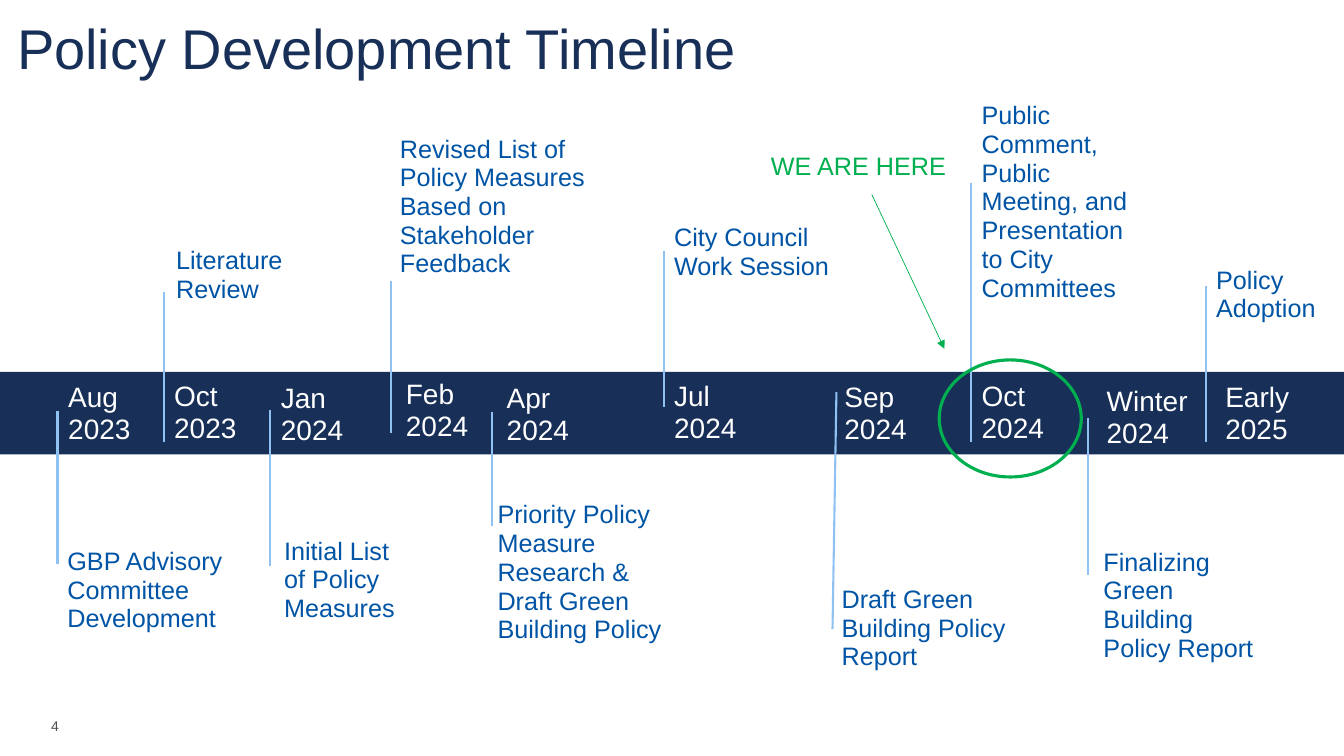
import pptx
import pptx.util
import pptx.dml.color
import pptx.enum.shapes
import pptx.enum.text
import pptx.oxml
import pptx.oxml.ns
from dataclasses import dataclass
from typing import NamedTuple

Cm = pptx.util.Cm
Pt = pptx.util.Pt
Anchor = pptx.enum.text.MSO_ANCHOR
Shape = pptx.enum.shapes.MSO_SHAPE


@dataclass(frozen=True)
class Theme:
    font: str = "Arial"
    navy: str = "182F58"
    label: str = "0054A5"
    stem: str = "8FC2F2"
    marker: str = "00B050"
    white: str = "FFFFFF"
    grey: str = "4D4D4F"
    title_size: int = 40
    date_size: int = 20
    label_size: int = 18
    number_size: int = 10
    line_spacing: float = 0.95


class Event(NamedTuple):
    date: str
    date_box: tuple
    stem: tuple
    label: str
    label_box: tuple
    label_lines: int


DATE_HEIGHT = 1.88
LINE_HEIGHT = 0.73
BOX_PADDING = 0.25

EVENTS = [
    Event("Aug 2023", (1.47, 9.5, 3.02), (1.45, 10.36, 1.45, 14.22),
          "GBP Advisory Committee Development", (1.45, 13.67, 4.95), 3),
    Event("Oct 2023", (4.14, 9.47, 2.87), (4.14, 7.37, 4.14, 11.13),
          "Literature Review", (4.19, 6.1, 5.18), 2),
    Event("Jan 2024", (6.83, 9.53, 2.64), (6.81, 10.34, 6.81, 14.27),
          "Initial List of Policy Measures", (6.91, 13.41, 3.84), 3),
    Event("Feb 2024", (9.98, 9.42, 2.62), (9.86, 7.09, 9.86, 10.9),
          "Revised List of Policy Measures Based on Stakeholder Feedback",
          (9.83, 3.28, 5.18), 5),
    Event("Apr 2024", (12.52, 9.53, 2.79), (12.4, 10.39, 12.4, 13.26),
          "Priority Policy Measure Research & Draft Green Building Policy",
          (12.29, 12.5, 5.18), 5),
    Event("Jul 2024", (16.74, 9.47, 2.51), (16.74, 6.32, 16.74, 10.26),
          "City Council Work Session", (16.74, 5.51, 4.47), 2),
    Event("Sep 2024", (21.03, 9.5, 2.51), (21.08, 9.88, 20.98, 15.85),
          "Draft Green Building Policy Report", (20.96, 14.63, 5.18), 3),
    Event("Oct 2024", (24.49, 9.47, 2.74), (24.46, 4.62, 24.46, 11.13),
          "Public Comment, Public Meeting, and Presentation to City Committees",
          (24.49, 2.44, 4.47), 7),
    Event("Winter 2024", (27.64, 9.6, 2.62), (27.41, 10.54, 27.41, 14.48),
          "Finalizing Green Building Policy Report", (27.56, 13.69, 4.47), 4),
    Event("Early 2025", (30.63, 9.5, 2.74), (30.4, 7.21, 30.4, 11.13),
          "Policy Adoption", (30.4, 6.58, 3.84), 2),
]


class TimelineSlide:
    def __init__(self, presentation, theme):
        self.theme = theme
        self.slide = presentation.slides.add_slide(presentation.slide_layouts[5])

    def color(self, value):
        return pptx.dml.color.RGBColor.from_string(value)

    def style(self, paragraph, size, color):
        paragraph.alignment = pptx.enum.text.PP_ALIGN.LEFT
        paragraph.font.name = self.theme.font
        paragraph.font.size = Pt(size)
        paragraph.font.color.rgb = self.color(color)

    def title(self, text, left, top, width, height):
        shape = self.slide.shapes.title
        shape.left, shape.top, shape.width, shape.height = map(Cm, (left, top, width, height))
        frame = shape.text_frame
        frame.text = text
        frame.auto_size = pptx.enum.text.MSO_AUTO_SIZE.NONE
        frame.vertical_anchor = Anchor.BOTTOM
        frame.margin_left, frame.margin_right = Cm(0.13), Cm(0.25)
        frame.margin_top = frame.margin_bottom = 0
        self.style(frame.paragraphs[0], self.theme.title_size, self.theme.navy)

    def text(self, text, left, top, width, height, size, color,
             spacing=None, wrap=True, anchor=Anchor.TOP):
        frame = self.slide.shapes.add_textbox(*map(Cm, (left, top, width, height))).text_frame
        frame.word_wrap = wrap
        frame.vertical_anchor = anchor
        frame.text = text
        paragraph = frame.paragraphs[0]
        if spacing:
            paragraph.line_spacing = spacing
        self.style(paragraph, size, color)

    def shape(self, kind, left, top, width, height, fill=None, line=None, weight=0):
        shape = self.slide.shapes.add_shape(kind, *map(Cm, (left, top, width, height)))
        shape.shadow.inherit = False
        if fill:
            shape.fill.solid()
            shape.fill.fore_color.rgb = self.color(fill)
        else:
            shape.fill.background()
        if line:
            shape.line.color.rgb = self.color(line)
            shape.line.width = Pt(weight)
        else:
            shape.line.fill.background()

    def line(self, start_x, start_y, end_x, end_y, color, weight, arrow=False):
        connector = self.slide.shapes.add_connector(
            pptx.enum.shapes.MSO_CONNECTOR.STRAIGHT,
            *map(Cm, (start_x, start_y, end_x, end_y)))
        connector.line.color.rgb = self.color(color)
        connector.line.width = Pt(weight)
        if arrow:
            tail = pptx.oxml.parse_xml(
                f'<a:tailEnd {pptx.oxml.ns.nsdecls("a")} type="triangle"/>')
            connector.line._get_or_add_ln().append(tail)
        effects = pptx.oxml.parse_xml(f'<a:effectLst {pptx.oxml.ns.nsdecls("a")}/>')
        connector._element.spPr.append(effects)

    def event(self, event):
        theme = self.theme
        self.text(event.date, *event.date_box, DATE_HEIGHT,
                  theme.date_size, theme.white, theme.line_spacing)
        self.line(*event.stem, theme.stem, 1.5)
        label_height = event.label_lines * LINE_HEIGHT + BOX_PADDING
        self.text(event.label, *event.label_box, label_height,
                  theme.label_size, theme.label, theme.line_spacing)


def main():
    theme = Theme()
    presentation = pptx.Presentation()
    presentation.slide_width = Cm(33.87)
    presentation.slide_height = Cm(19.05)

    timeline = TimelineSlide(presentation, theme)
    timeline.shape(Shape.RECTANGLE, 0, 9.37, 33.87, 2.08, fill=theme.navy)
    timeline.text("4", 1.04, 17.78, 10.16, 1.02, theme.number_size, theme.grey,
                  anchor=Anchor.MIDDLE)
    timeline.title("Policy Development Timeline", 0.3, 0.03, 31.32, 2)
    for event in EVENTS:
        timeline.event(event)

    timeline.shape(Shape.OVAL, 23.67, 9.07, 3.58, 2.95, line=theme.marker, weight=2.25)
    timeline.line(21.97, 4.9, 23.8, 8.79, theme.marker, 0.5, arrow=True)
    timeline.text("WE ARE HERE", 19.18, 3.66, 4.98, 1.02, theme.label_size, theme.marker,
                  wrap=False)
    presentation.save("out.pptx")


if __name__ == "__main__":
    main()
